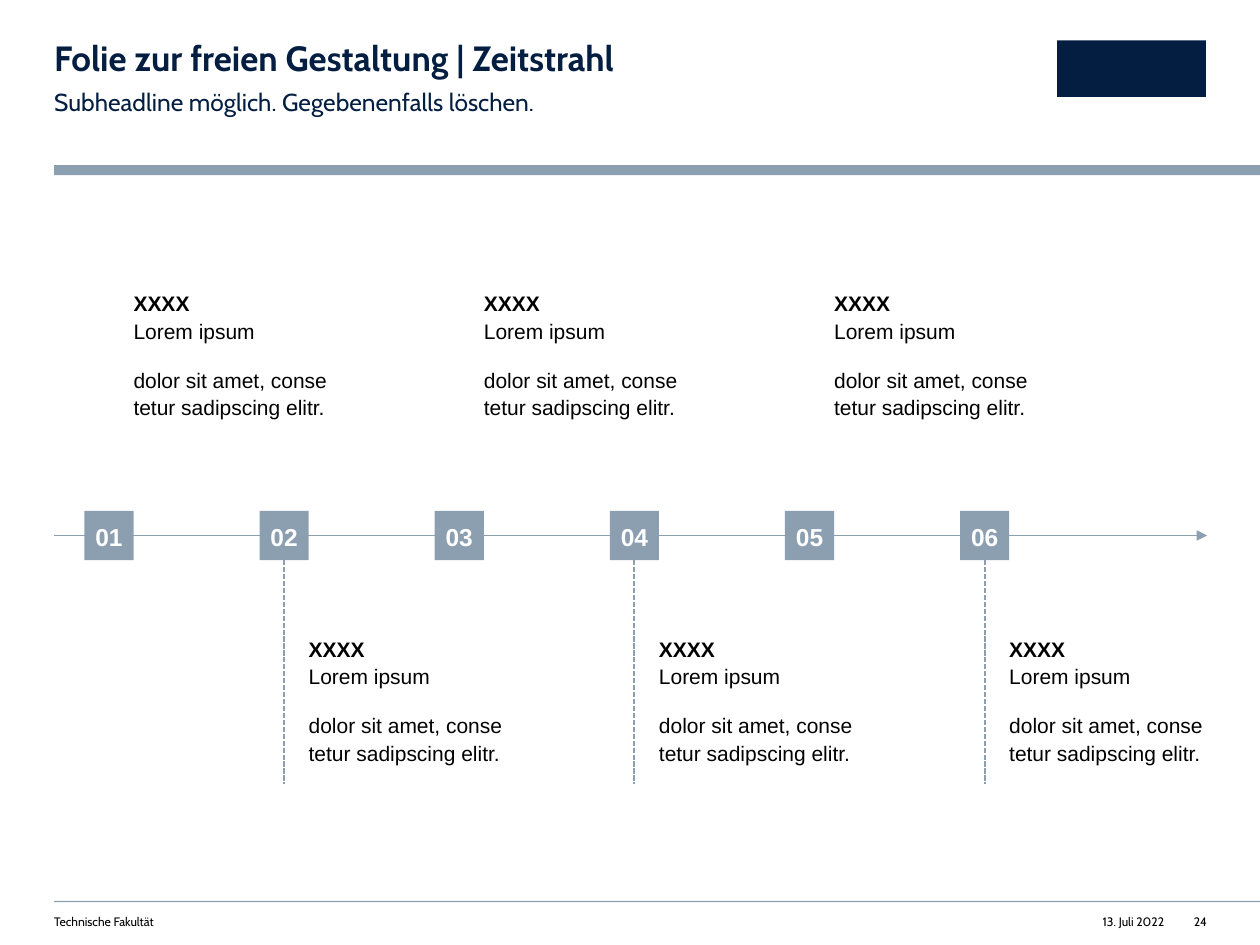
from pptx import Presentation
from pptx.dml.color import RGBColor
from pptx.enum.dml import MSO_LINE
from pptx.enum.shapes import MSO_CONNECTOR, MSO_SHAPE
from pptx.enum.text import MSO_ANCHOR as Anchor, MSO_AUTO_SIZE as AutoSize, PP_ALIGN as Align
from pptx.oxml.ns import qn
from pptx.util import Inches, Pt
from lxml.etree import SubElement

NAVY = RGBColor(0x04, 0x1E, 0x42)
STEEL = RGBColor(0x8C, 0x9F, 0xB1)
BLACK = RGBColor(0, 0, 0)
WHITE = RGBColor(255, 255, 255)

# Content
TITLE = "Folie zur freien Gestaltung | Zeitstrahl"
SUBTITLE = "Subheadline möglich. Gegebenenfalls löschen."
ENTRY = ("XXXX", "Lorem ipsum", ("dolor sit amet, conse", "tetur sadipscing elitr."))
STEPS = [(number, *ENTRY) for number in ("01", "02", "03", "04", "05", "06")]
FOOTER = [  # text, left, width, alignment
    ("Technische Fakultät", 0.43, 4.49, Align.LEFT),
    ("13. Juli 2022", 8.67, 0.57, Align.RIGHT),
    ("24", 9.38, 0.2, Align.RIGHT),
]

# Timeline measures in inches
MARGIN, RIGHT = 0.43, 9.58
AXIS_Y = 4.25
FIRST_X, STEP = 0.67, 1.39
MARKER = 0.39
TEXT_TOPS = (2.29, 5.03)  # above the axis, below the axis
TEXT_WIDTH, TEXT_HEIGHT = 1.55, 1.04
LEADER_END = 6.22


def set_frame(shape, wrap=True, anchor=Anchor.TOP, right=0):
    frame = shape.text_frame
    frame.margin_left = frame.margin_top = frame.margin_bottom = 0
    frame.margin_right = Inches(right)
    frame.auto_size = AutoSize.NONE
    frame.word_wrap = wrap
    frame.vertical_anchor = anchor
    return frame


def format_para(para, size, color, font="Arial", bold=False, align=Align.LEFT,
                spacing=1.0, after=0):
    para.font.name, para.font.size = font, Pt(size)
    para.font.bold, para.font.color.rgb = bold, color
    para.alignment, para.line_spacing = align, spacing
    para.space_before, para.space_after = Pt(0), Pt(after)


def place(shape, left, top, width, height):
    shape.left, shape.top = Inches(left), Inches(top)
    shape.width, shape.height = Inches(width), Inches(height)


def add_box(left, top, width, height):
    return page.shapes.add_textbox(*map(Inches, (left, top, width, height)))


def add_block(left, top, width, height, color):
    block = page.shapes.add_shape(
        MSO_SHAPE.RECTANGLE, *map(Inches, (left, top, width, height)))
    block.shadow.inherit = False
    block.fill.solid()
    block.fill.fore_color.rgb = color
    block.line.fill.background()
    return block


def add_line(x1, y1, x2, y2):
    line = page.shapes.add_connector(
        MSO_CONNECTOR.STRAIGHT, *map(Inches, (x1, y1, x2, y2)))
    line.line.color.rgb = STEEL
    line.line.width = Pt(1)
    SubElement(line._element.spPr, qn("a:effectLst"))
    return line


def add_entry(left, top, heading, subject, details):
    box = add_box(left, top, TEXT_WIDTH, TEXT_HEIGHT)
    frame = set_frame(box, wrap=False)
    first, second = frame.paragraphs[0], frame.add_paragraph()
    for para in (first, second):
        format_para(para, 12, BLACK, spacing=1.1, after=12)
    span = first.add_run()
    span.text, span.font.bold = heading, True
    first.add_line_break()
    first.add_run().text = subject
    second.text = "\v".join(details)


deck = Presentation()
deck.slide_width, deck.slide_height = Inches(10), Inches(7.5)
page = deck.slides.add_slide(deck.slide_layouts[1])

# Rules and logo area
add_block(MARGIN, 1.31, 10 - MARGIN, 0.08, STEEL)
add_block(MARGIN, 7.15, 10 - MARGIN, 0.01, STEEL)
add_block(8.39, 0.32, 1.18, 0.45, NAVY)

# Title and subtitle
title, subtitle = page.shapes.title, page.placeholders[1]
place(title, MARGIN, 0.33, 5.61, 0.3)
place(subtitle, MARGIN, 0.67, 5.61, 0.24)
para = set_frame(title).paragraphs[0]
para.text = TITLE
format_para(para, 20, NAVY, "Cabin", bold=True, spacing=0.9)
para = set_frame(subtitle, right=0.39).paragraphs[0]
para.text = SUBTITLE
format_para(para, 14, NAVY, "Cabin", spacing=1.1, after=8)
properties = para._p.get_or_add_pPr()
properties.set("marL", "0")
properties.set("indent", "0")
properties.insert_element_before(
    properties.makeelement(qn("a:buNone"), {}), "a:tabLst", "a:defRPr", "a:extLst")

# Footer
for text, left, width, align in FOOTER:
    para = set_frame(add_box(left, 7.26, width, 0.12)).paragraphs[0]
    para.text = text
    format_para(para, 7, BLACK, "Cabin", align=align)

# Time axis
axis = add_line(MARGIN, AXIS_Y, RIGHT, AXIS_Y)
SubElement(axis.line._get_or_add_ln(), qn("a:tailEnd"), type="triangle")

# Steps alternate above and below the axis; those below have a leader
for index, (number, *entry) in enumerate(STEPS):
    left, below = FIRST_X + index * STEP, index % 2
    marker = add_block(left, AXIS_Y - MARKER / 2, MARKER, MARKER, STEEL)
    para = set_frame(marker, anchor=Anchor.MIDDLE).paragraphs[0]
    para.text = number
    format_para(para, 14, WHITE, bold=True, align=Align.CENTER, spacing=1.1, after=12)
    add_entry(left + MARKER, TEXT_TOPS[below], *entry)
    if below:
        center = left + MARKER / 2
        leader = add_line(center, AXIS_Y + MARKER / 2, center, LEADER_END)
        leader.line.dash_style = MSO_LINE.SQUARE_DOT

deck.save("out.pptx")
